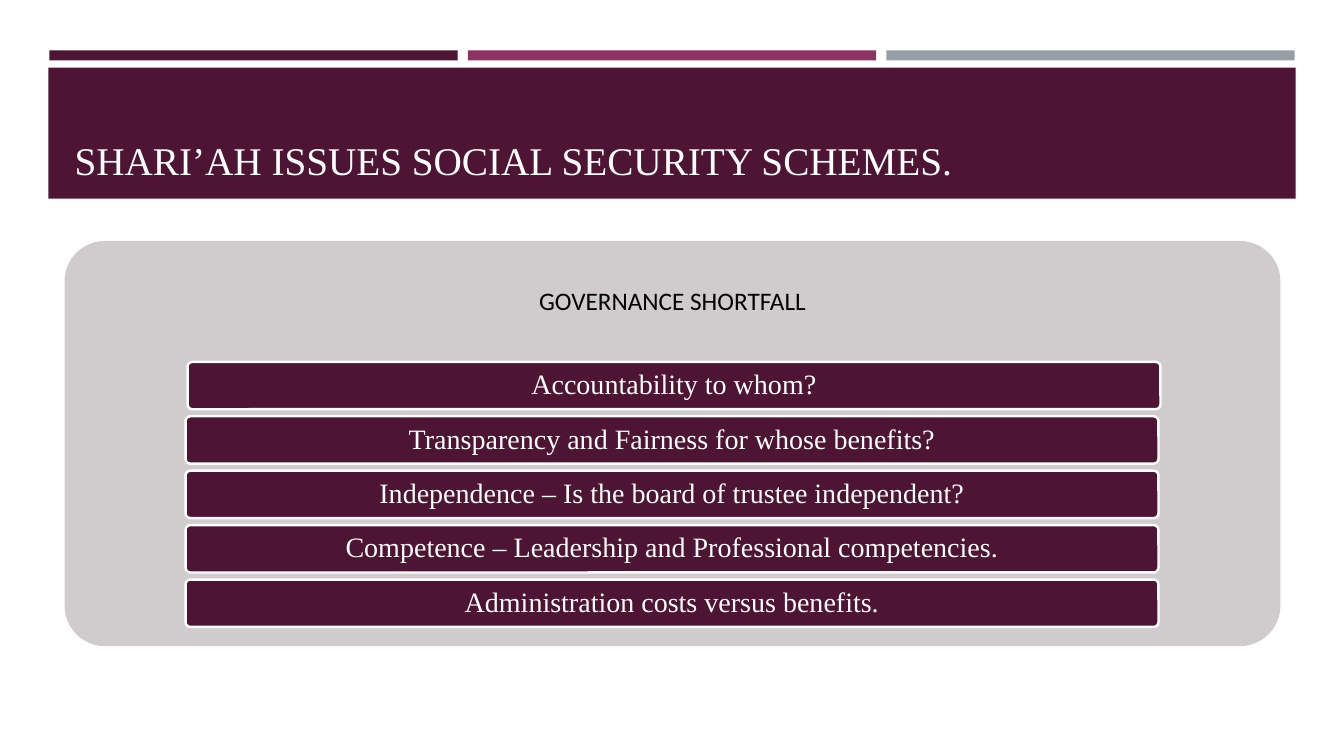
from pptx import Presentation
from pptx.dml.color import RGBColor
from pptx.enum.shapes import MSO_SHAPE
from pptx.enum.text import MSO_ANCHOR, PP_ALIGN
from pptx.util import Pt

# Content
TITLE = "SHARI’AH ISSUES SOCIAL SECURITY SCHEMES."
HEAD = "GOVERNANCE SHORTFALL"
ISSUES = [
    "Accountability to whom?",
    "Transparency and Fairness for whose benefits?",
    "Independence – Is the board of trustee independent?",
    "Competence – Leadership and Professional competencies.",
    "Administration costs versus benefits.",
]

PLUM = RGBColor(0x4D, 0x14, 0x34)
BERRY = RGBColor(0x90, 0x31, 0x63)
STEEL = RGBColor(0x96, 0x9F, 0xA7)
GREY = RGBColor(0xD0, 0xCC, 0xCE)
WHITE = RGBColor(0xFF, 0xFF, 0xFF)
BLACK = RGBColor(0, 0, 0)
SERIF, SANS = "Times New Roman", "Calibri"

# Layout in px, 100 to the inch
SCALE = 9144
STRIPS = [PLUM, BERRY, STEEL]
STRIP_X, STRIP_STEP = 49, 415
BAR_Y, BAR_STEP = 359, 54


def px(*sizes):
    return [size * SCALE for size in sizes]


def block(box, fill, kind=MSO_SHAPE.RECTANGLE):
    shape = slide.shapes.add_shape(kind, *px(*box))
    shape.shadow.inherit = False
    shape.fill.solid()
    shape.fill.fore_color.rgb = fill
    shape.line.fill.background()
    if kind == MSO_SHAPE.ROUNDED_RECTANGLE:
        shape.adjustments[0] = 0.1
    return shape


def write(shape, text, size, face, color, align=PP_ALIGN.CENTER,
          anchor=MSO_ANCHOR.MIDDLE, inset=(6, 4)):
    frame = shape.text_frame
    frame.word_wrap = True
    frame.vertical_anchor = anchor
    frame.margin_left = frame.margin_right = inset[0] * SCALE
    frame.margin_top = frame.margin_bottom = inset[1] * SCALE
    para = frame.paragraphs[0]
    para.text = text
    para.alignment = align
    para.line_spacing = 0.9
    para.font.size = Pt(size)
    para.font.name = face
    para.font.color.rgb = color


deck = Presentation()
deck.slide_width, deck.slide_height = px(1333, 750)
slide = deck.slides.add_slide(deck.slide_layouts[5])

# Strips and title band
for i, color in enumerate(STRIPS):
    block((STRIP_X + i * STRIP_STEP, 50, 405, 10), color)
block((48, 67, 1237, 130), PLUM)

# Title, raised above the band
title = slide.shapes.title
title.left, title.top, title.width, title.height = px(64, 77, 1206, 111)
write(title, TITLE, 28, SERIF, WHITE, PP_ALIGN.LEFT, MSO_ANCHOR.BOTTOM, (10, 5))
slide.shapes._spTree.append(title._element)

# Panel with its heading
block((64, 239, 1206, 402), GREY, MSO_SHAPE.ROUNDED_RECTANGLE)
head = slide.shapes.add_textbox(*px(64, 239, 1206, 121))
write(head, HEAD, 18, SANS, BLACK, inset=(7, 7))

# Issue bars; the first sits slightly to the right
for i, issue in enumerate(ISSUES):
    left = 184 if i else 186
    bar = block((left, BAR_Y + i * BAR_STEP, 965, 47), PLUM,
                MSO_SHAPE.ROUNDED_RECTANGLE)
    bar.line.color.rgb = WHITE
    bar.line.width = Pt(1.75)
    write(bar, issue, 20, SERIF, WHITE)

deck.save("out.pptx")
